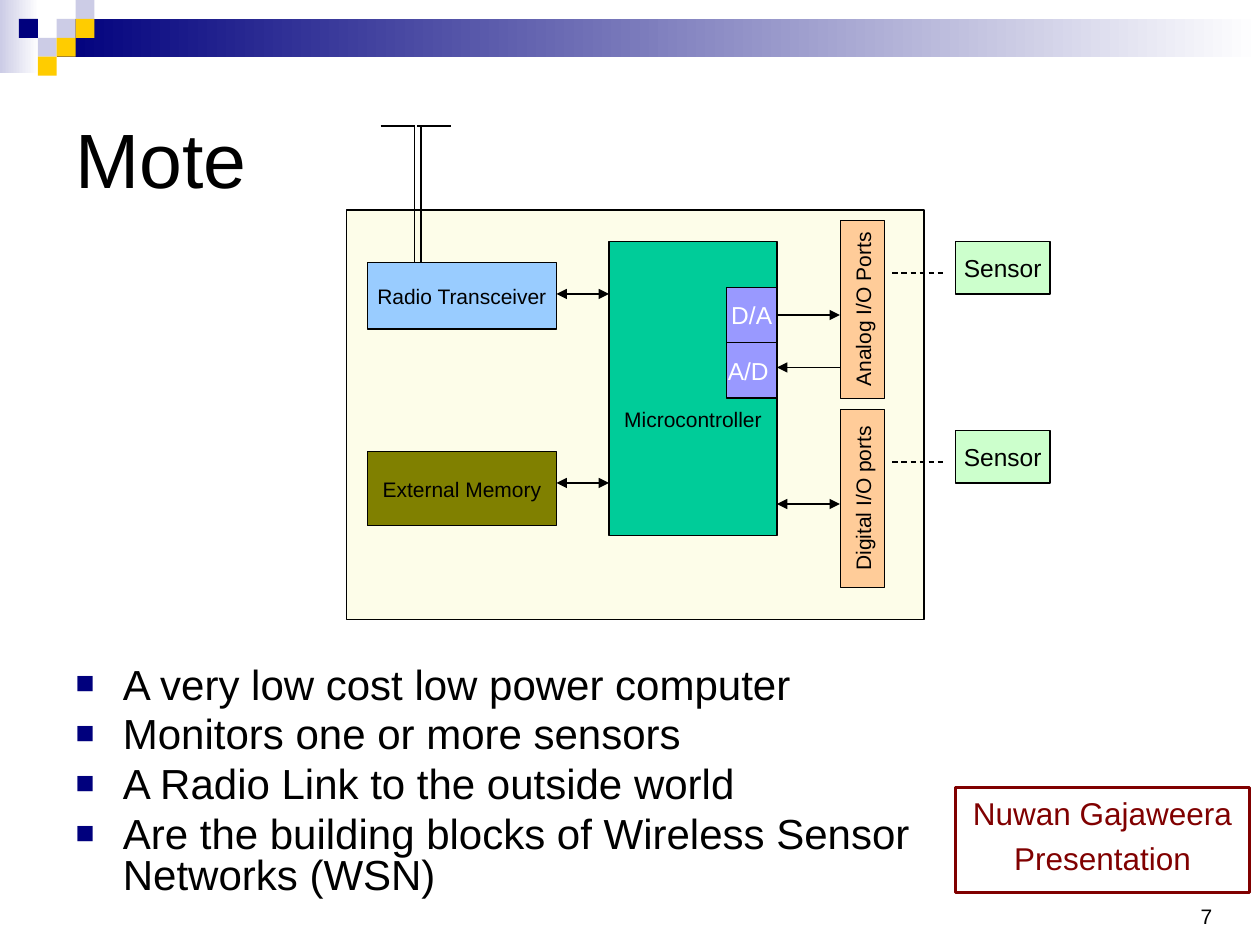
from pptx import Presentation
from pptx.dml.color import RGBColor
from pptx.enum.dml import MSO_LINE
from pptx.enum.shapes import MSO_CONNECTOR as CONN, MSO_SHAPE as SHP
from pptx.enum.text import MSO_ANCHOR as ANC, MSO_AUTO_SIZE as FIT, PP_ALIGN as AL
from pptx.oxml.ns import qn
from pptx.util import Pt
from lxml.etree import SubElement


def rgb(value):
    """Return the colour for a hex string."""
    return RGBColor.from_string(value)


class SlideBuilder:
    """Hold the style and the current slide."""

    font, ink, navy, pale, gold = "Arial", "000000", "00007D", "CCCCE6", "FFCC00"

    def __init__(self, prs):
        """Add a title and content slide."""
        self.s = prs.slides.add_slide(prs.slide_layouts[1])

    def run(self, p, text, size, color=None):
        """Add one formatted run."""
        r = p.add_run()
        r.text = text
        r.font.name, r.font.size = self.font, Pt(size)
        r.font.color.rgb = rgb(color or self.ink)

    def place(self, sp, x, y, w, h):
        """Move and size a shape."""
        sp.left, sp.top, sp.width, sp.height = Pt(x), Pt(y), Pt(w), Pt(h)

    def title(self, text, box):
        """Fill the title placeholder."""
        sp = self.s.shapes.title
        self.place(sp, *box)
        tf = sp.text_frame
        tf.auto_size, tf.vertical_anchor = FIT.NONE, ANC.MIDDLE
        p = tf.paragraphs[0]
        p.alignment = AL.LEFT
        self.run(p, text, 44)

    def bullets(self, items, box):
        """Fill the body placeholder with a square-bulleted list."""
        sp = self.s.placeholders[1]
        self.place(sp, *box)
        tf = sp.text_frame
        tf.auto_size = FIT.NONE
        for i, item in enumerate(items):
            p = tf.add_paragraph() if i else tf.paragraphs[0]
            pPr = p._p.get_or_add_pPr()
            pPr.set("marL", str(Pt(27)))
            pPr.set("indent", str(Pt(-27)))
            SubElement(SubElement(pPr, qn("a:buClr")), qn("a:srgbClr"), val=self.navy)
            SubElement(pPr, qn("a:buSzPct"), val="75000")
            SubElement(pPr, qn("a:buFont"), typeface=self.font)
            SubElement(pPr, qn("a:buChar"), char="■")
            p.line_spacing, p.space_before = 0.8, Pt(5.5 if i else 0)
            self.run(p, item, 24)

    def rect(self, x, y, w, h, fill=None, line=None, width=0.75):
        """Add a rectangle with a solid, gradient or empty fill."""
        sp = self.s.shapes.add_shape(SHP.RECTANGLE, Pt(x), Pt(y), Pt(w), Pt(h))
        sp.shadow.inherit = False
        if isinstance(fill, tuple):
            sp.fill.gradient()
            sp.fill.gradient_angle = 0
            for stop, color in zip(sp.fill.gradient_stops, fill):
                stop.color.rgb = rgb(color)
        elif fill:
            sp.fill.solid()
            sp.fill.fore_color.rgb = rgb(fill)
        else:
            sp.fill.background()
        if line:
            sp.line.color.rgb, sp.line.width = rgb(line), Pt(width)
        else:
            sp.line.fill.background()
        return sp

    def block(self, text, x, y, w, h, fill, size=12, color=None, turn=0, top=3.6):
        """Add an outlined block with a centred label."""
        sp = self.rect(x, y, w, h, fill, self.ink)
        sp.rotation = turn
        tf = sp.text_frame
        tf.word_wrap, tf.vertical_anchor, tf.margin_top = False, ANC.MIDDLE, Pt(top)
        p = tf.paragraphs[0]
        p.alignment = AL.CENTER
        self.run(p, text, size, color)

    def credit(self, lines, x, y, w, h, color):
        """Add a framed box of centred lines."""
        tf = self.rect(x, y, w, h, line=color, width=2).text_frame
        tf.word_wrap, tf.vertical_anchor = True, ANC.TOP
        for i, text in enumerate(lines):
            p = tf.add_paragraph() if i else tf.paragraphs[0]
            p.alignment, p.space_before = AL.CENTER, Pt(4.3 if i else 0)
            self.run(p, text, 18, color)

    def line(self, x1, y1, x2, y2, ends=(), dash=False):
        """Add a straight line with optional arrowheads."""
        c = self.s.shapes.add_connector(CONN.STRAIGHT, Pt(x1), Pt(y1), Pt(x2), Pt(y2))
        c.line.color.rgb, c.line.width = rgb(self.ink), Pt(0.75)
        if dash:
            c.line.dash_style = MSO_LINE.DASH
        for end in ends:
            SubElement(c.line._get_or_add_ln(), qn(f"a:{end}"), type="triangle")
        SubElement(c._element.spPr, qn("a:effectLst"))

    def number(self, text, x, y, w, h):
        """Add the slide number."""
        tf = self.s.shapes.add_textbox(Pt(x), Pt(y), Pt(w), Pt(h)).text_frame
        tf.word_wrap = False
        self.run(tf.paragraphs[0], text, 12)

    def banner(self):
        """Add the gradient bar and its mosaic of squares."""
        u = 10.8
        self.rect(0, 0, 22.3, 41.8, (self.pale, "FFFFFF"))
        self.rect(3 * u, u, 720 - 3 * u, 2 * u, (self.navy, "FFFFFF"))
        squares = {self.pale: [(3, 1), (4, 0), (2, 2)],
                   self.gold: [(4, 1), (3, 2), (2, 3)],
                   self.navy: [(1, 1)]}
        for color, cells in squares.items():
            for col, row in cells:
                self.rect(col * u, row * u, u, u, color)

    def diagram(self):
        """Draw the mote, its parts and the links between them."""
        self.rect(198, 120, 330, 234, "FDFDE9", self.ink)
        self.block("External Memory", 210, 258, 108, 42.5, "808000")
        self.block("Radio Transceiver", 210, 150, 108, 38, "99CCFF")
        self.block("Microcontroller", 348, 138, 96, 168, "00CC99", top=38)
        for i, (port, conv) in enumerate([("Analog I/O Ports", "D/A"),
                                          ("Digital I/O ports", "A/D ")]):
            shift = 108 * i
            self.block(port, 442, 164.2 + shift, 102, 25.2, "FFCC99", turn=270)
            self.block(conv, 415.2, 164.2 + 31.6 * i, 28.8, 31.6, "9999FF", 14, "FFFFFF")
            self.block("Sensor", 546, 138 + shift, 54, 30, "CCFFCC", 14)
            self.line(510, 156 + shift, 540, 156 + shift, dash=True)
            self.line(318, 168 + shift, 348, 168 + shift, ("headEnd", "tailEnd"))
        self.line(444, 180, 480, 180, ("tailEnd",))
        self.line(480, 210, 444, 210, ("tailEnd",))
        self.line(444, 288, 480, 288, ("headEnd", "tailEnd"))
        for x in (237, 240.5):
            self.line(x, 150, x, 72)
        for x in (217.5, 238.5):
            self.line(x, 72, x + 19.5, 72)


def main():
    """Build the slide and save it."""
    prs = Presentation()
    prs.slide_width, prs.slide_height = Pt(720), Pt(540)
    b = SlideBuilder(prs)
    b.banner()
    b.number("7", 679, 512.6, 28.8, 21.6)
    b.title("Mote", (36, 36, 648, 108))
    b.bullets(["A very low cost low power computer",
               "Monitors one or more sensors",
               "A Radio Link to the outside world",
               "Are the building blocks of Wireless Sensor Networks (WSN)"],
              (36, 378, 510, 144))
    b.diagram()
    b.credit(["Nuwan Gajaweera", "Presentation"], 546, 450, 168, 60, "800000")
    prs.save("out.pptx")


if __name__ == "__main__":
    main()
